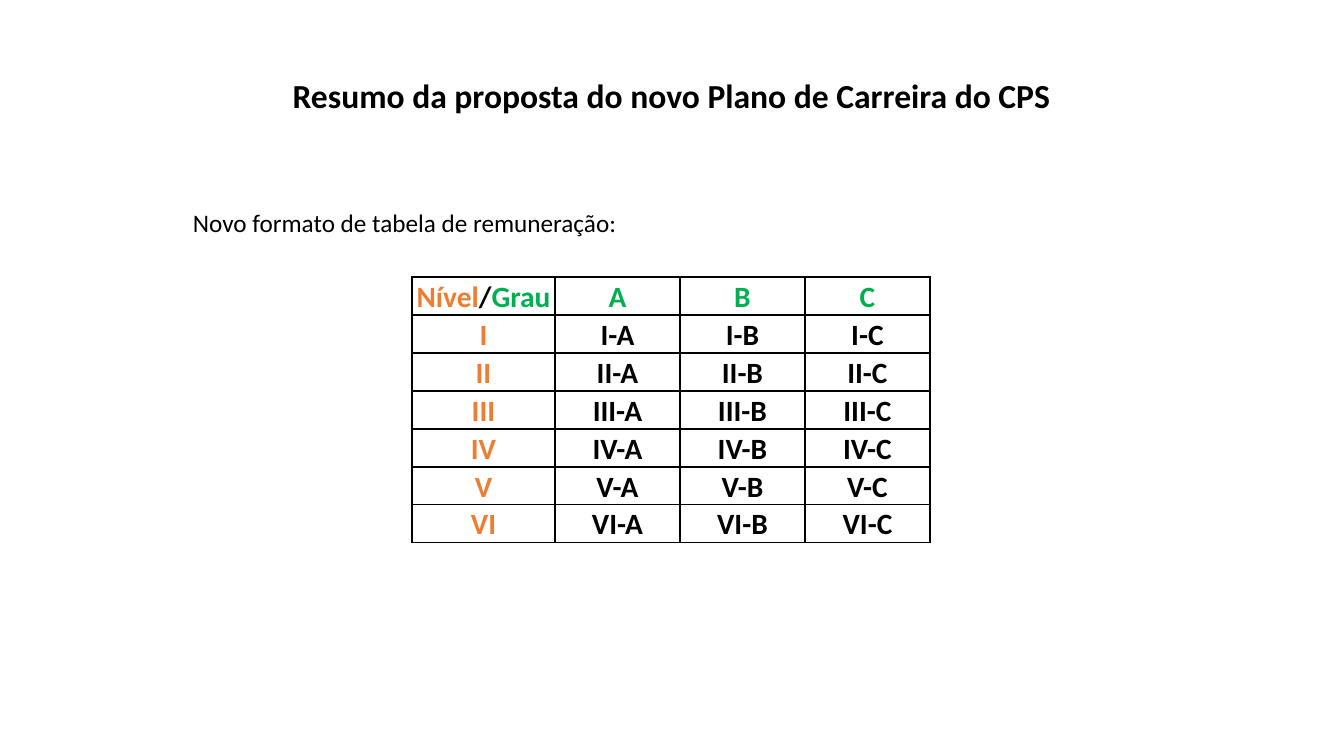
from lxml.etree import SubElement
from pptx import Presentation
from pptx.dml.color import RGBColor
from pptx.enum.text import MSO_ANCHOR, PP_ALIGN
from pptx.oxml.ns import qn
from pptx.util import Pt

PX = 914400 * 10 // 1008
COLORS = {"black": "000000", "level": "ED7D31", "grade": "00B050"}
GRADES = ["A", "B", "C"]
LEVELS = ["I", "II", "III", "IV", "V", "VI"]


def add_run(p, text, size, color="black", bold=True):
    r = p.add_run()
    r.text = text
    r.font.name = "Calibri"
    r.font.size = Pt(size)
    r.font.bold = bold
    r.font.color.rgb = RGBColor.from_string(COLORS[color])


def add_borders(cell):
    tcPr = cell._tc.get_or_add_tcPr()
    for side in ("lnL", "lnR", "lnT", "lnB"):
        ln = SubElement(tcPr, qn(f"a:{side}"), w=str(Pt(1)))
        fill = SubElement(ln, qn("a:solidFill"))
        SubElement(fill, qn("a:srgbClr"), val=COLORS["black"])


prs = Presentation()
prs.slide_width = 1344 * PX
prs.slide_height = 756 * PX
s = prs.slides.add_slide(prs.slide_layouts[6])

sp = s.shapes.add_textbox(183 * PX, 70 * PX, 977 * PX, 265 * PX)
tf = sp.text_frame
tf.word_wrap = True
p = tf.paragraphs[0]
p.alignment = PP_ALIGN.CENTER
add_run(p, "Resumo da proposta do novo Plano de Carreira do CPS", 24)
p = tf.add_paragraph()
p.space_before = Pt(66)
add_run(p, "Novo formato de tabela de remuneração:", 18, bold=False)

rows = [[[("Nível", "level"), ("/", "black"), ("Grau", "grade")]]
        + [[(grade, "grade")] for grade in GRADES]]
for level in LEVELS:
    rows.append([[(level, "level")]]
                + [[(f"{level}-{grade}", "black")] for grade in GRADES])

widths = [143, 125, 125, 125]
row_height = 38
table = s.shapes.add_table(len(rows), len(widths), 412 * PX, 277 * PX,
                           sum(widths) * PX, len(rows) * row_height * PX).table
table.first_row = False
table.horz_banding = False
for column, width in zip(table.columns, widths):
    column.width = width * PX

for row, contents in zip(table.rows, rows):
    row.height = row_height * PX
    for cell, runs in zip(row.cells, contents):
        add_borders(cell)
        cell.fill.background()
        cell.vertical_anchor = MSO_ANCHOR.BOTTOM
        cell.margin_left = cell.margin_right = cell.margin_top = PX
        cell.margin_bottom = 0
        p = cell.text_frame.paragraphs[0]
        p.alignment = PP_ALIGN.CENTER
        for text, color in runs:
            add_run(p, text, 21, color)

prs.save("out.pptx")
